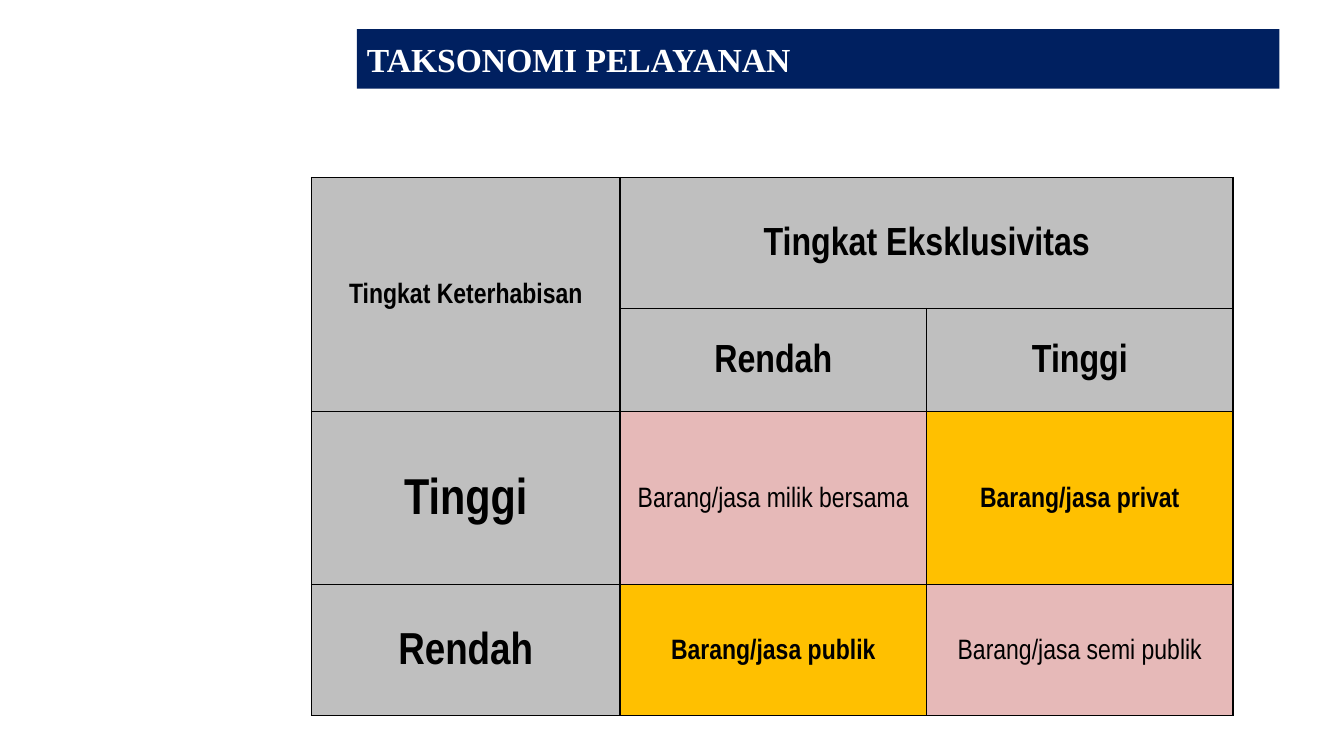
from lxml import etree
from pptx import Presentation
from pptx.dml.color import RGBColor
from pptx.enum.shapes import MSO_SHAPE
from pptx.enum.text import MSO_ANCHOR, PP_ALIGN
from pptx.oxml.ns import qn
from pptx.util import Inches, Pt

RECT = MSO_SHAPE.RECTANGLE
MIDDLE = MSO_ANCHOR.MIDDLE
LEFT, CENTER = PP_ALIGN.LEFT, PP_ALIGN.CENTER

COLORS = {
    "navy": "002060",
    "white": "FFFFFF",
    "black": "000000",
    "gray": "BFBFBF",
    "pink": "E6B9B8",
    "gold": "FFC000",
}
COLS = [3.06, 3.04, 3.04]
ROWS = [1.3, 1.02, 1.72, 1.3]

# row, column, text, size, bold, fill
CELLS = [
    (0, 0, "Tingkat Keterhabisan", 20, True, "gray"),
    (0, 1, "Tingkat Eksklusivitas", 28, True, "gray"),
    (1, 1, "Rendah", 28, True, "gray"),
    (1, 2, "Tinggi", 28, True, "gray"),
    (2, 0, "Tinggi", 36, True, "gray"),
    (2, 1, "Barang/jasa milik bersama", 20, False, "pink"),
    (2, 2, "Barang/jasa privat", 20, True, "gold"),
    (3, 0, "Rendah", 32, True, "gray"),
    (3, 1, "Barang/jasa publik", 20, True, "gold"),
    (3, 2, "Barang/jasa semi publik", 20, False, "pink"),
]
MERGES = [((0, 0), (1, 0)), ((0, 1), (0, 2))]


def paint(fill, color):
    fill.solid()
    fill.fore_color.rgb = RGBColor.from_string(COLORS[color])


def write(frame, text, *, font, size, color, bold=True, align=LEFT, spacing=1.0):
    par = frame.paragraphs[0]
    par.alignment = align
    par.line_spacing = spacing
    run = par.add_run()
    run.text = text
    run.font.name = font
    run.font.size = Pt(size)
    run.font.bold = bold
    run.font.color.rgb = RGBColor.from_string(COLORS[color])


def frame_cell(cell, color, width):
    """Draw the four borders of a cell; they must precede its fill."""
    props = cell._tc.get_or_add_tcPr()
    for spot, side in enumerate(("lnL", "lnR", "lnT", "lnB")):
        line = etree.Element(qn(f"a:{side}"), w=str(Pt(width)))
        solid = etree.SubElement(line, qn("a:solidFill"))
        etree.SubElement(solid, qn("a:srgbClr"), val=COLORS[color])
        props.insert(spot, line)


class Deck:
    """Holds the slide and the fonts of its title and table."""

    def __init__(self):
        self.file = Presentation()
        self.file.slide_width = Inches(13.33)
        self.file.slide_height = Inches(7.5)
        self.slide = self.file.slides.add_slide(self.file.slide_layouts[6])
        self.head = "Times New Roman"
        self.body = "Arial Narrow"

    def banner(self, text, *box):
        bar = self.slide.shapes.add_shape(RECT, *map(Inches, box))
        bar.shadow.inherit = False
        paint(bar.fill, "navy")
        bar.line.fill.background()
        bar.text_frame.word_wrap = True
        bar.text_frame.vertical_anchor = MIDDLE
        write(bar.text_frame, text, font=self.head, size=24, color="white")

    def matrix(self, left, top):
        shape = self.slide.shapes.add_table(
            len(ROWS), len(COLS), Inches(left), Inches(top),
            Inches(sum(COLS)), Inches(sum(ROWS)))
        table = shape.table
        table.first_row = table.horz_banding = False
        for col, width in zip(table.columns, COLS):
            col.width = Inches(width)
        for row, height in zip(table.rows, ROWS):
            row.height = Inches(height)
        for first, last in MERGES:
            table.cell(*first).merge(table.cell(*last))
        for cell in table.iter_cells():
            paint(cell.fill, "gray")
            frame_cell(cell, "black", 1)
        for row, col, text, size, bold, fill in CELLS:
            cell = table.cell(row, col)
            paint(cell.fill, fill)
            cell.vertical_anchor = MIDDLE
            cell.margin_left = cell.margin_right = Inches(0.07)
            cell.margin_top = cell.margin_bottom = 0
            write(cell.text_frame, text, font=self.body, size=size,
                  color="black", bold=bold, align=CENTER, spacing=1.15)


def main():
    deck = Deck()
    deck.banner("TAKSONOMI PELAYANAN", 3.54, 0.29, 9.15, 0.59)
    deck.matrix(3.09, 1.76)
    deck.file.save("out.pptx")


if __name__ == "__main__":
    main()
